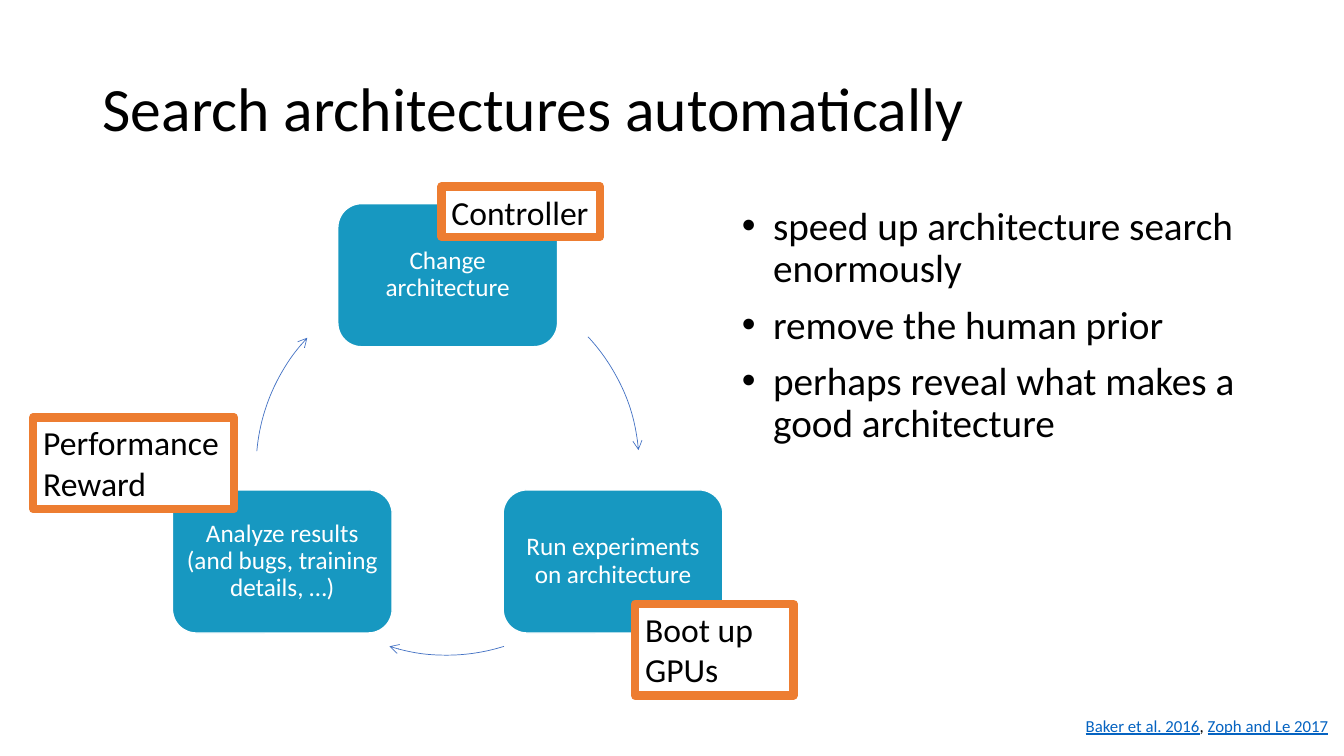
from lxml import etree
from pptx import Presentation
from pptx.dml.color import RGBColor
from pptx.enum.shapes import MSO_SHAPE
from pptx.enum.text import MSO_ANCHOR, MSO_AUTO_SIZE, PP_ALIGN
from pptx.oxml.ns import qn
from pptx.util import Pt

SCALE = 9144
ROUNDED, RECTANGLE, ARC = MSO_SHAPE.ROUNDED_RECTANGLE, MSO_SHAPE.RECTANGLE, MSO_SHAPE.ARC
TOP, MIDDLE = MSO_ANCHOR.TOP, MSO_ANCHOR.MIDDLE
LEFT, CENTER = PP_ALIGN.LEFT, PP_ALIGN.CENTER
FIT_SHAPE = MSO_AUTO_SIZE.SHAPE_TO_FIT_TEXT

BLACK = RGBColor(0x00, 0x00, 0x00)
WHITE = RGBColor(0xFF, 0xFF, 0xFF)
TEAL = RGBColor(0x17, 0x98, 0xC1)
BLUE = RGBColor(0x44, 0x72, 0xC4)
ORANGE = RGBColor(0xED, 0x7D, 0x31)
LINK = RGBColor(0x05, 0x63, 0xC1)

NODE_SIZE = (218, 142)
CYCLE_SIZE = (378, 378)
NODES = [
    (335, 202, "Change architecture"),
    (499, 486, "Run experiments on architecture"),
    (171, 486, "Analyze results (and bugs, training details, …)"),
]
ARROWS = [(256, 274, 317, 355), (254, 272, 72.5, 107.5), (254, 275, 185, 223)]
LABELS = [
    ((438, 185, 157, 50), "Controller"),
    ((33, 414, 199, 91), "Performance\nReward"),
    ((630, 599, 157, 91), "Boot up GPUs"),
]
BENEFITS = [
    "speed up architecture search enormously",
    "remove the human prior",
    "perhaps reveal what makes a good architecture",
]
CITATIONS = [("Baker et al. 2016", LINK, True), (", ", BLACK, False), ("Zoph and Le 2017", LINK, True)]


def px(*lengths):
    return [round(length * SCALE) for length in lengths]


def set_values(target, values):
    for name, value in values.items():
        setattr(target, name, value)


def style_span(span, size, color, underline=False):
    set_values(span.font, {"name": "Calibri", "size": Pt(size), "underline": underline})
    span.font.color.rgb = color


def write_para(para, text, size, color=BLACK, **values):
    para.text = text
    set_values(para, values)
    for span in para.runs:
        style_span(span, size, color)


def add_text_box(page, place, **values):
    frame = page.shapes.add_textbox(*px(*place)).text_frame
    set_values(frame, {"word_wrap": True, **values})
    return frame


def add_box(page, kind, place, fill, line, width):
    box = page.shapes.add_shape(kind, *px(*place))
    box.shadow.inherit = False
    if fill is None:
        box.fill.background()
    else:
        box.fill.solid()
        box.fill.fore_color.rgb = fill
    box.line.color.rgb = line
    box.line.width = Pt(width)
    return box


def add_node(page, left, top, text):
    frame = add_box(page, ROUNDED, (left, top, *NODE_SIZE), TEAL, WHITE, 1).text_frame
    sides = ("margin_left", "margin_top", "margin_right", "margin_bottom")
    set_values(frame, dict.fromkeys(sides, px(7)[0]))
    set_values(frame, {"word_wrap": True, "vertical_anchor": MIDDLE})
    write_para(frame.paragraphs[0], text, 18, WHITE, alignment=CENTER, line_spacing=0.9)


def add_cycle_arrow(page, left, top, start, end):
    arrow = add_box(page, ARC, (left, top, *CYCLE_SIZE), None, BLUE, 0.5)
    for index, degrees in enumerate((start, end)):
        arrow.adjustments[index] = degrees * 0.6
    line = arrow.line._get_or_add_ln()
    etree.SubElement(line, qn("a:tailEnd"), type="arrow")


def add_label(page, place, text):
    frame = add_box(page, RECTANGLE, place, WHITE, ORANGE, 6).text_frame
    set_values(frame, {"word_wrap": True, "vertical_anchor": TOP, "auto_size": FIT_SHAPE})
    write_para(frame.paragraphs[0], text, 24, alignment=LEFT)


def add_bullets(page, place, items):
    frame = add_text_box(page, place)
    indent = px(31)[0]
    for index, item in enumerate(items):
        para = frame.add_paragraph() if index else frame.paragraphs[0]
        write_para(para, item, 28, line_spacing=0.9, space_before=Pt(10))
        properties = para._p.get_or_add_pPr()
        properties.set("marL", str(indent))
        properties.set("indent", str(-indent))
        etree.SubElement(properties, qn("a:buFont"), typeface="Arial")
        etree.SubElement(properties, qn("a:buChar"), char="•")


def add_citations(page, place, citations):
    para = add_text_box(page, place, auto_size=FIT_SHAPE).paragraphs[0]
    for text, color, underline in citations:
        span = para.add_run()
        span.text = text
        style_span(span, 12, color, underline)


def main():
    deck = Presentation()
    deck.slide_width, deck.slide_height = px(1333, 750)
    page = deck.slides.add_slide(deck.slide_layouts[6])

    title = add_text_box(page, (92, 38, 1150, 145), vertical_anchor=MIDDLE)
    write_para(title.paragraphs[0], "Search architectures automatically", 44, line_spacing=0.9)
    add_bullets(page, (726, 200, 516, 476), BENEFITS)
    for node, arrow in zip(NODES, ARROWS):
        add_node(page, *node)
        add_cycle_arrow(page, *arrow)
    for place, text in LABELS:
        add_label(page, place, text)
    add_citations(page, (1067, 705, 266, 50), CITATIONS)
    deck.save("out.pptx")


if __name__ == "__main__":
    main()
